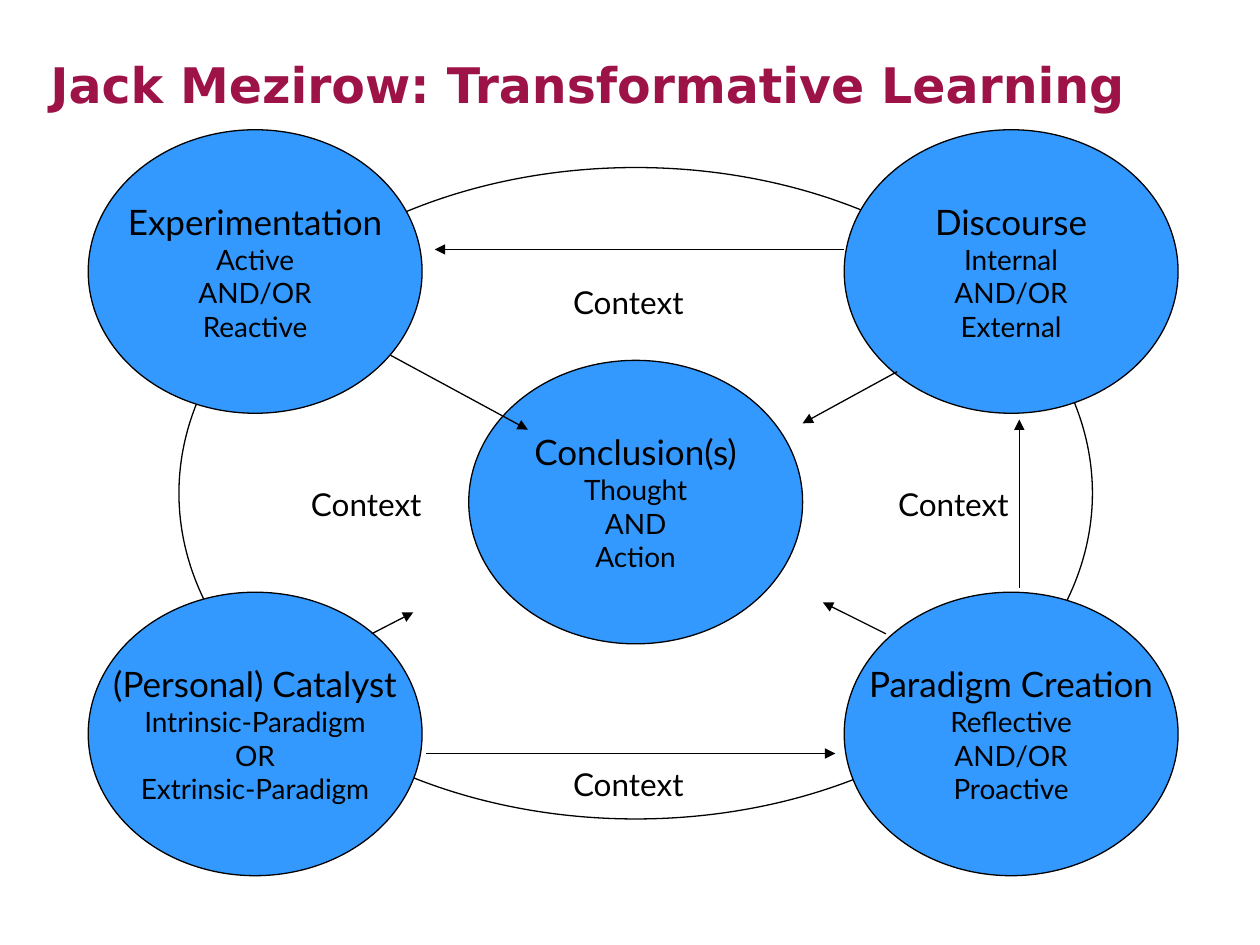
from dataclasses import dataclass
from typing import NamedTuple

from lxml.etree import SubElement
from pptx import Presentation
from pptx.dml.color import RGBColor
from pptx.enum.shapes import MSO_CONNECTOR, MSO_SHAPE
from pptx.enum.text import MSO_ANCHOR, MSO_AUTO_SIZE, PP_ALIGN
from pptx.oxml.ns import qn
from pptx.shapes.autoshape import Shape
from pptx.slide import Slide
from pptx.text.text import TextFrame, _Paragraph
from pptx.util import Inches, Pt


@dataclass(frozen=True)
class Theme:
    title_color: RGBColor = RGBColor(0x9D, 0x13, 0x48)
    stage_fill: RGBColor = RGBColor(0x33, 0x99, 0xFF)
    ink: RGBColor = RGBColor(0, 0, 0)
    paper: RGBColor = RGBColor(0xFF, 0xFF, 0xFF)
    title_font: str = "DejaVu Sans"
    body_font: str = "Lato"
    title_size: Pt = Pt(28)
    heading_size: Pt = Pt(20)
    context_size: Pt = Pt(18)
    detail_size: Pt = Pt(16)
    stroke: Pt = Pt(0.75)
    hanging: Inches = Inches(0.38)


class Area(NamedTuple):
    column: float
    row: float
    columns: float
    rows: float


class Stage(NamedTuple):
    column: float
    row: float
    heading: str
    details: tuple[str, ...]


class Context(NamedTuple):
    column: float
    row: float


class Arrow(NamedTuple):
    start_column: float
    start_row: float
    end_column: float
    end_row: float


THEME = Theme()
COLUMNS, ROWS = 100, 75
SLIDE_WIDTH, SLIDE_HEIGHT = Inches(10), Inches(7.5)
LEFT, CENTRE, RIGHT = 7, 37.2, 67
TOP, MIDDLE, BOTTOM = 10.3, 28.6, 47
STAGE_COLUMNS, STAGE_ROWS = 26.5, 22.5
CONTEXT_COLUMNS, CONTEXT_ROWS = 11.7, 4

TITLE = "Jack Mezirow: Transformative Learning"
TITLE_AREA = Area(4, 4.3, 90, 9.8)
CYCLE_AREA = Area(14.2, 13.3, 72.5, 51.7)

STAGES = (
    Stage(LEFT, BOTTOM, "(Personal) Catalyst",
          ("Intrinsic-Paradigm", "OR", "Extrinsic-Paradigm")),
    Stage(RIGHT, BOTTOM, "Paradigm Creation", ("Reflective", "AND/OR", "Proactive")),
    Stage(CENTRE, MIDDLE, "Conclusion(s)", ("Thought", "AND", "Action")),
    Stage(LEFT, TOP, "Experimentation", ("Active", "AND/OR", "Reactive")),
    Stage(RIGHT, TOP, "Discourse", ("Internal", "AND/OR", "External")),
)
CONTEXTS = (Context(44.5, 60.2), Context(70.3, 38), Context(44.5, 22), Context(23.7, 38))
ARROWS = (
    Arrow(29.5, 50.3, 32.8, 48.6),
    Arrow(70.3, 50.3, 65.3, 47.8),
    Arrow(71.2, 29.5, 63.7, 33.6),
    Arrow(67, 19.8, 34.5, 19.8),
    Arrow(80.9, 46.7, 80.9, 33.3),
    Arrow(33.8, 59.8, 66.3, 59.8),
    Arrow(31, 28.2, 41.9, 34.1),
)


def across(columns: float) -> int:
    return round(SLIDE_WIDTH * columns / COLUMNS)


def down(rows: float) -> int:
    return round(SLIDE_HEIGHT * rows / ROWS)


def place(area: Area) -> tuple[int, int, int, int]:
    return across(area.column), down(area.row), across(area.columns), down(area.rows)


def set_margins(frame: TextFrame, right: float = 0, bottom: float = 0) -> None:
    frame.margin_left = frame.margin_top = 0
    frame.margin_right, frame.margin_bottom = Inches(right), Inches(bottom)


def add_words(paragraph: _Paragraph, words: str, size: Pt, font: str = THEME.body_font,
              color: RGBColor = THEME.ink, bold: bool = False) -> None:
    run = paragraph.add_run()
    run.text = words
    run.font.size, run.font.name, run.font.bold = size, font, bold
    run.font.color.rgb = color


def write_title(slide: Slide) -> None:
    title = slide.shapes.title
    title.left, title.top, title.width, title.height = place(TITLE_AREA)
    frame = title.text_frame
    set_margins(frame, right=0.1, bottom=0.05)
    frame.word_wrap, frame.auto_size = True, MSO_AUTO_SIZE.NONE
    frame.vertical_anchor = MSO_ANCHOR.TOP
    heading = frame.paragraphs[0]
    heading.alignment = PP_ALIGN.LEFT
    add_words(heading, TITLE, THEME.title_size, THEME.title_font, THEME.title_color, True)


def add_ellipse(slide: Slide, area: Area) -> Shape:
    ellipse = slide.shapes.add_shape(MSO_SHAPE.OVAL, *place(area))
    ellipse.shadow.inherit = False
    ellipse.fill.background()
    ellipse.line.color.rgb, ellipse.line.width = THEME.ink, THEME.stroke
    return ellipse


def add_stage(slide: Slide, stage: Stage) -> None:
    ellipse = add_ellipse(slide, Area(stage.column, stage.row, STAGE_COLUMNS, STAGE_ROWS))
    ellipse.fill.solid()
    ellipse.fill.fore_color.rgb = THEME.stage_fill
    frame = ellipse.text_frame
    set_margins(frame)
    frame.word_wrap, frame.vertical_anchor = False, MSO_ANCHOR.MIDDLE
    for position, words in enumerate((stage.heading, *stage.details)):
        paragraph = frame.add_paragraph() if position else frame.paragraphs[0]
        paragraph.alignment = PP_ALIGN.CENTER
        properties = paragraph._p.get_or_add_pPr()
        properties.set("marL", str(THEME.hanging))
        properties.set("indent", str(-THEME.hanging))
        add_words(paragraph, words, THEME.detail_size if position else THEME.heading_size)


def add_context(slide: Slide, context: Context) -> None:
    area = Area(context.column, context.row, CONTEXT_COLUMNS, CONTEXT_ROWS)
    frame = slide.shapes.add_textbox(*place(area)).text_frame
    frame.word_wrap, frame.auto_size = True, MSO_AUTO_SIZE.SHAPE_TO_FIT_TEXT
    add_words(frame.paragraphs[0], "Context", THEME.context_size)


def add_arrow(slide: Slide, arrow: Arrow) -> None:
    connector = slide.shapes.add_connector(
        MSO_CONNECTOR.STRAIGHT, across(arrow.start_column), down(arrow.start_row),
        across(arrow.end_column), down(arrow.end_row))
    connector.line.color.rgb, connector.line.width = THEME.ink, THEME.stroke
    SubElement(connector.line._get_or_add_ln(), qn("a:tailEnd"), type="triangle")
    SubElement(connector._element.spPr, qn("a:effectLst"))


def main() -> None:
    presentation = Presentation()
    presentation.slide_width, presentation.slide_height = SLIDE_WIDTH, SLIDE_HEIGHT
    slide = presentation.slides.add_slide(presentation.slide_layouts[5])
    slide.background.fill.solid()
    slide.background.fill.fore_color.rgb = THEME.paper
    write_title(slide)
    add_ellipse(slide, CYCLE_AREA)
    for stage in STAGES:
        add_stage(slide, stage)
    for context in CONTEXTS:
        add_context(slide, context)
    for arrow in ARROWS:
        add_arrow(slide, arrow)
    presentation.save("out.pptx")


if __name__ == "__main__":
    main()
